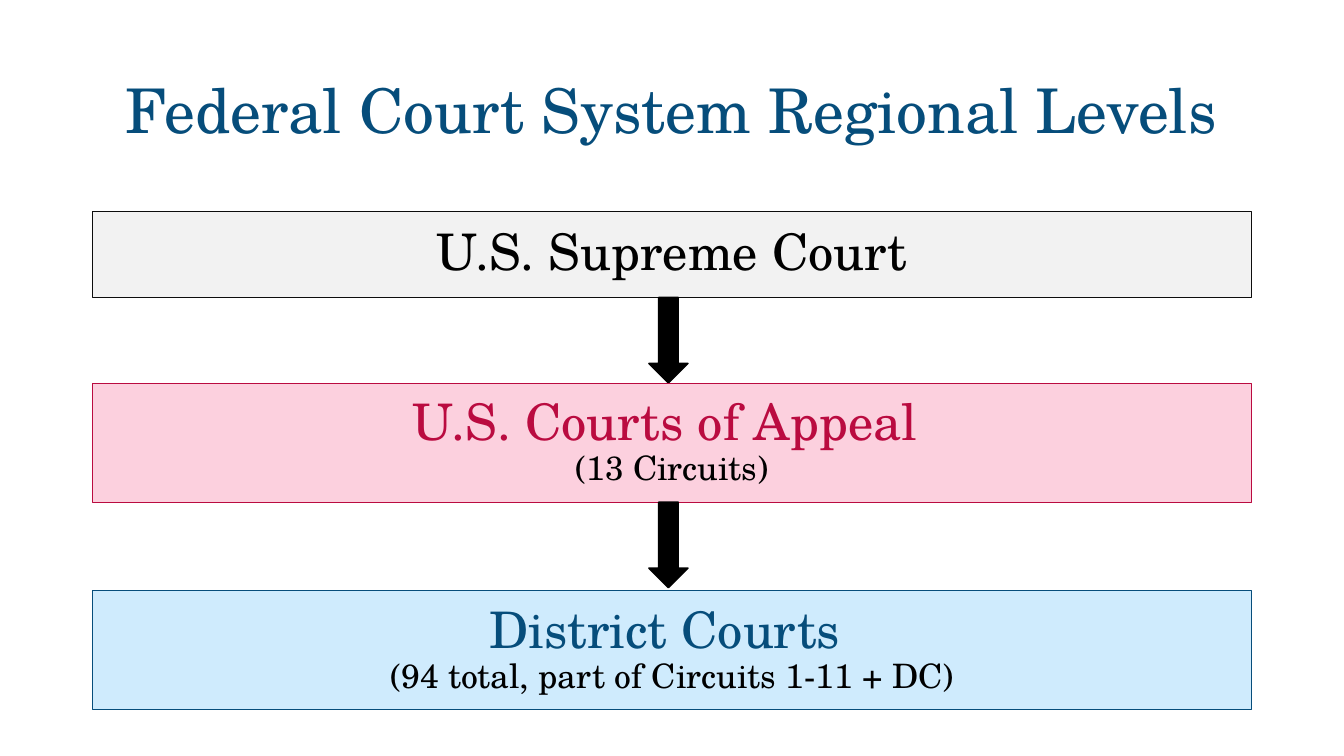
import pptx
import pptx.dml.color
import pptx.enum.shapes
import pptx.enum.text
import pptx.util

Pt = pptx.util.Pt
RGBColor = pptx.dml.color.RGBColor
SHAPE = pptx.enum.shapes.MSO_SHAPE

BLACK = RGBColor(0x00, 0x00, 0x00)
INK = RGBColor(0x0D, 0x0D, 0x0D)
GREY = RGBColor(0xF2, 0xF2, 0xF2)
CRIMSON = RGBColor(0xBA, 0x0B, 0x40)
PINK = RGBColor(0xFC, 0xD0, 0xDE)
NAVY = RGBColor(0x06, 0x4D, 0x7B)
SKY = RGBColor(0xCF, 0xEB, 0xFD)

LEFT, WIDTH = 66, 828
ARROW_CENTER, ARROW_WIDTH, ARROW_LENGTH = 477.5, 28, 61.2

# top, height, fill, line, heading, heading colour, detail
COURTS = [
    (150.8, 61.6, GREY, INK, "U.S. Supreme Court", BLACK, None),
    (273.6, 85, PINK, CRIMSON, "U.S. Courts of Appeal ", CRIMSON, "(13 Circuits)"),
    (422, 85, SKY, NAVY, "District Courts ", NAVY,
     "(94 total, part of Circuits 1-11 + DC)"),
]


class Deck:
    font = "TeX Gyre Schola"
    frame_format = {"word_wrap": True,
                    "vertical_anchor": pptx.enum.text.MSO_ANCHOR.MIDDLE}
    paragraph_format = {"alignment": pptx.enum.text.PP_ALIGN.CENTER,
                        "line_spacing": 0.9}

    def __init__(self, slide):
        self.slide = slide

    def apply(self, target, values):
        for name, value in values.items():
            setattr(target, name, value)

    def add_text(self, sp, lines, space_before=0):
        """Put (text, size, colour) lines into one centred paragraph."""
        tf = sp.text_frame
        self.apply(tf, self.frame_format)
        p = tf.paragraphs[0]
        self.apply(p, {**self.paragraph_format, "space_before": Pt(space_before)})
        for i, (text, size, color) in enumerate(lines):
            if i:
                p.add_line_break()
            r = p.add_run()
            r.text = text
            self.apply(r.font, {"name": self.font, "size": Pt(size)})
            r.font.color.rgb = color

    def title(self, text, top, height):
        sp = self.slide.shapes.add_textbox(Pt(LEFT), Pt(top), Pt(WIDTH), Pt(height))
        self.add_text(sp, [(text, 44, NAVY)])

    def shape(self, kind, left, top, width, height, fill, line, weight):
        sp = self.slide.shapes.add_shape(kind, Pt(left), Pt(top), Pt(width), Pt(height))
        sp.shadow.inherit = False
        sp.fill.solid()
        sp.fill.fore_color.rgb = fill
        sp.line.color.rgb = line
        sp.line.width = Pt(weight)
        return sp

    def court(self, top, height, fill, line, heading, color, detail):
        sp = self.shape(SHAPE.RECTANGLE, LEFT, top, WIDTH, height, fill, line, 0.75)
        lines = [(heading, 36, color)]
        if detail:
            lines.append((detail, 24, BLACK))
        self.add_text(sp, lines, space_before=10)

    def arrow(self, top):
        self.shape(SHAPE.DOWN_ARROW, ARROW_CENTER - ARROW_WIDTH / 2, top,
                   ARROW_WIDTH, ARROW_LENGTH, BLACK, BLACK, 1)


def main():
    prs = pptx.Presentation()
    prs.slide_width, prs.slide_height = Pt(960), Pt(540)
    deck = Deck(prs.slides.add_slide(prs.slide_layouts[6]))
    deck.title("Federal Court System Regional Levels", 28.8, 104.4)
    for i, court in enumerate(COURTS):
        deck.court(*court)
        if i < len(COURTS) - 1:
            top, height = court[:2]
            deck.arrow(top + height)
    prs.save("out.pptx")


if __name__ == "__main__":
    main()
